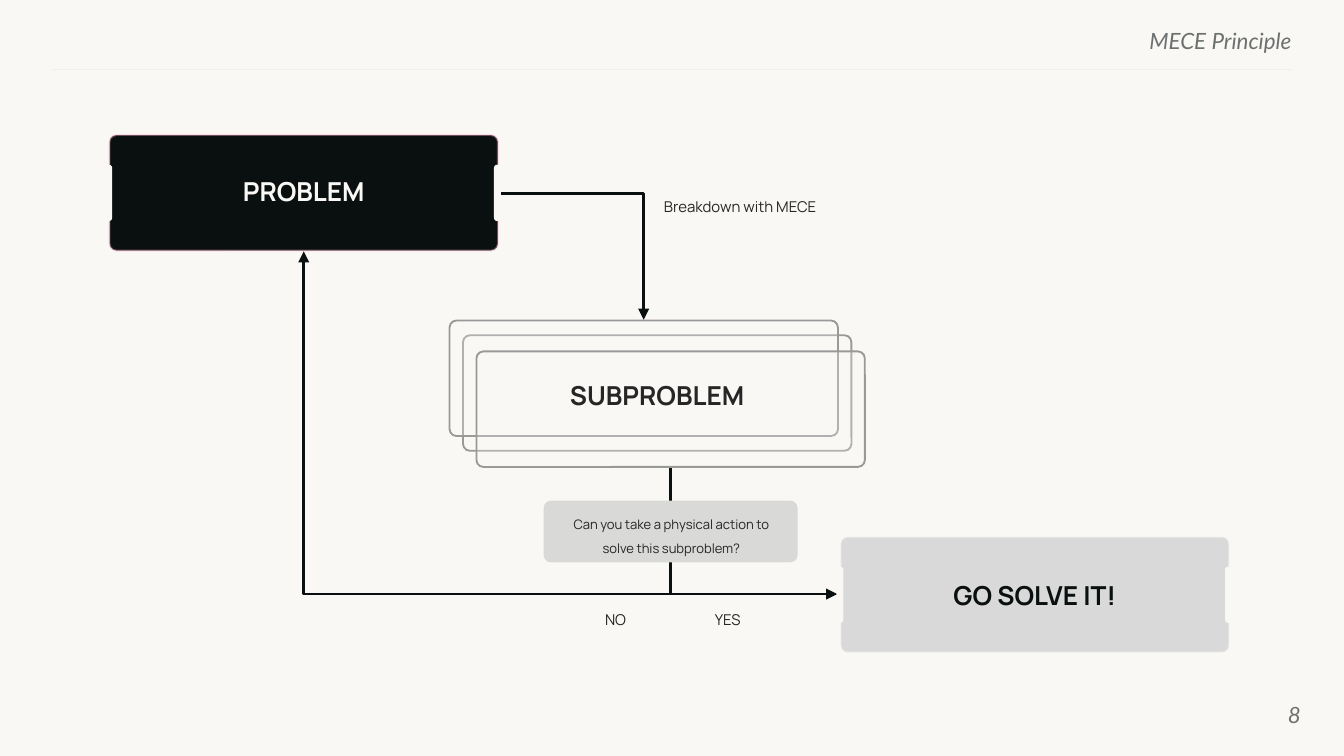
from lxml import etree
from pptx import Presentation
from pptx import util as u
from pptx.dml.color import RGBColor
from pptx.enum import shapes, text
from pptx.oxml import ns

PX = 4572
BOX_W, BOX_H = 578, 172
INK, PAPER, GREY, BODY, MUTED = "09100F", "F9F8F5", "D9D9D9", "262626", "6C706F"
HEADING = {"size": u.Pt(14), "name": "Manrope", "bold": True}
LABEL = {"size": u.Pt(8), "name": "Manrope"}
QUESTION = {"size": u.Pt(7), "name": "Manrope"}
MARGIN = {"size": u.Pt(12), "name": "Lato", "italic": True}
LEFT, CENTER, RIGHT = text.PP_ALIGN.LEFT, text.PP_ALIGN.CENTER, text.PP_ALIGN.RIGHT


def px(*values):
    """Turn px lengths into EMU."""
    return [u.Emu(v * PX) for v in values]


def paint(fill, color, alpha=100):
    """Give a fill a solid colour with an opacity in percent."""
    fill.solid()
    fill.fore_color.rgb = RGBColor.from_string(color)
    if alpha < 100:
        clr = fill._xPr.find(".//" + ns.qn("a:srgbClr"))
        etree.SubElement(clr, ns.qn("a:alpha"), val=str(alpha * 1000))


def rounded(s, x, y, w, h, radius, color, alpha=100, line=None, line_alpha=100):
    """Add a rounded rectangle with an optional outline."""
    sp = s.shapes.add_shape(shapes.MSO_SHAPE.ROUNDED_RECTANGLE, *px(x, y, w, h))
    sp.adjustments[0] = radius
    sp.shadow.inherit = False
    paint(sp.fill, color, alpha)
    if line:
        sp.line.width = u.Pt(1)
        paint(sp.line.fill, line, line_alpha)
    else:
        sp.line.fill.background()


def ticket(s, x, y, color, line):
    """Add a box with a notch in each side."""
    rounded(s, x, y, BOX_W, BOX_H, 0.06, color, line=line, line_alpha=40)
    for edge in (x, x + BOX_W):
        rounded(s, edge - 6, y + 44, 10, 84, 0.5, PAPER)


def label(s, x, y, w, h, words, color, font, align=CENTER, spacing=None,
          inset=(14, 8), anchor=text.MSO_ANCHOR.TOP):
    """Add a one-paragraph text box."""
    tf = s.shapes.add_textbox(*px(x, y, w, h)).text_frame
    side, edge = px(*inset)
    frame = {"word_wrap": True, "vertical_anchor": anchor, "margin_left": side,
             "margin_right": side, "margin_top": edge, "margin_bottom": edge}
    if any(inset):
        frame["auto_size"] = text.MSO_AUTO_SIZE.SHAPE_TO_FIT_TEXT
    for key, value in frame.items():
        setattr(tf, key, value)
    p = tf.paragraphs[0]
    p.alignment, p.line_spacing = align, spacing
    r = p.add_run()
    r.text = words
    for key, value in font.items():
        setattr(r.font, key, value)
    r.font.color.rgb = RGBColor.from_string(color)


def connector(s, kind, points, color, width):
    """Add a connector without a shadow."""
    c = s.shapes.add_connector(kind, *px(*points))
    c.line.width = u.Pt(width)
    paint(c.line.fill, color)
    etree.SubElement(c._element.spPr, ns.qn("a:effectLst"))
    return c


def elbow(s, points, arrow, turned=False):
    """Add a one-bend arrow, turned by half a circle if it runs up and left."""
    c = connector(s, shapes.MSO_CONNECTOR.ELBOW, points, INK, 1.5)
    spPr = c._element.spPr
    spPr.find(ns.qn("a:prstGeom")).set("prst", "bentConnector2")
    if turned:
        spPr.find(ns.qn("a:xfrm")).set("rot", "10800000")
    etree.SubElement(c.line._get_or_add_ln(), ns.qn("a:" + arrow), type="triangle")


def main():
    """Build the slide."""
    prs = Presentation()
    prs.slide_width, prs.slide_height = px(2000, 1125)
    s = prs.slides.add_slide(prs.slide_layouts[6])
    paint(s.background.fill, PAPER)

    label(s, 1152, 40, 770, 36, "MECE Principle", MUTED, MARGIN, RIGHT, inset=(0, 0))
    connector(s, shapes.MSO_CONNECTOR.STRAIGHT, (1922, 103, 78, 103), "EFEFEF", 0.75)

    elbow(s, (998, 696, 1246, 884), "headEnd", turned=True)
    elbow(s, (746, 288, 958, 476), "tailEnd")
    ticket(s, 163, 201, INK, "FFB4D0")
    for x, y in ((689, 499), (669, 477), (709, 523)):
        rounded(s, x, y, BOX_W, BOX_H, 0.06, PAPER, 25, "999999")
    label(s, 263, 253, 378, 62, "PROBLEM", PAPER, HEADING)
    ticket(s, 1251, 799, GREY, PAPER)
    label(s, 1320, 854, 440, 62, "GO SOLVE IT!", INK, HEADING)
    label(s, 789, 556, 378, 62, "SUBPROBLEM", BODY, HEADING)
    elbow(s, (452, 374, 998, 884), "tailEnd", turned=True)

    rounded(s, 809, 745, 378, 92, 0.12, "D9D9D8")
    label(s, 832, 749, 334, 74, "Can you take a physical action to solve this subproblem?",
          BODY, QUESTION, spacing=1.5)
    for x, words in ((1048, "YES"), (881, "NO")):
        label(s, x, 885, 70, 42, words, BODY, LABEL, spacing=1.6)
    label(s, 974, 270, 356, 42, "Breakdown with MECE", BODY, LABEL, LEFT, 1.6)
    label(s, 1816, 1021, 120, 86, "8", MUTED, MARGIN, RIGHT, inset=(0, 0),
          anchor=text.MSO_ANCHOR.MIDDLE)
    prs.save("out.pptx")


if __name__ == "__main__":
    main()
